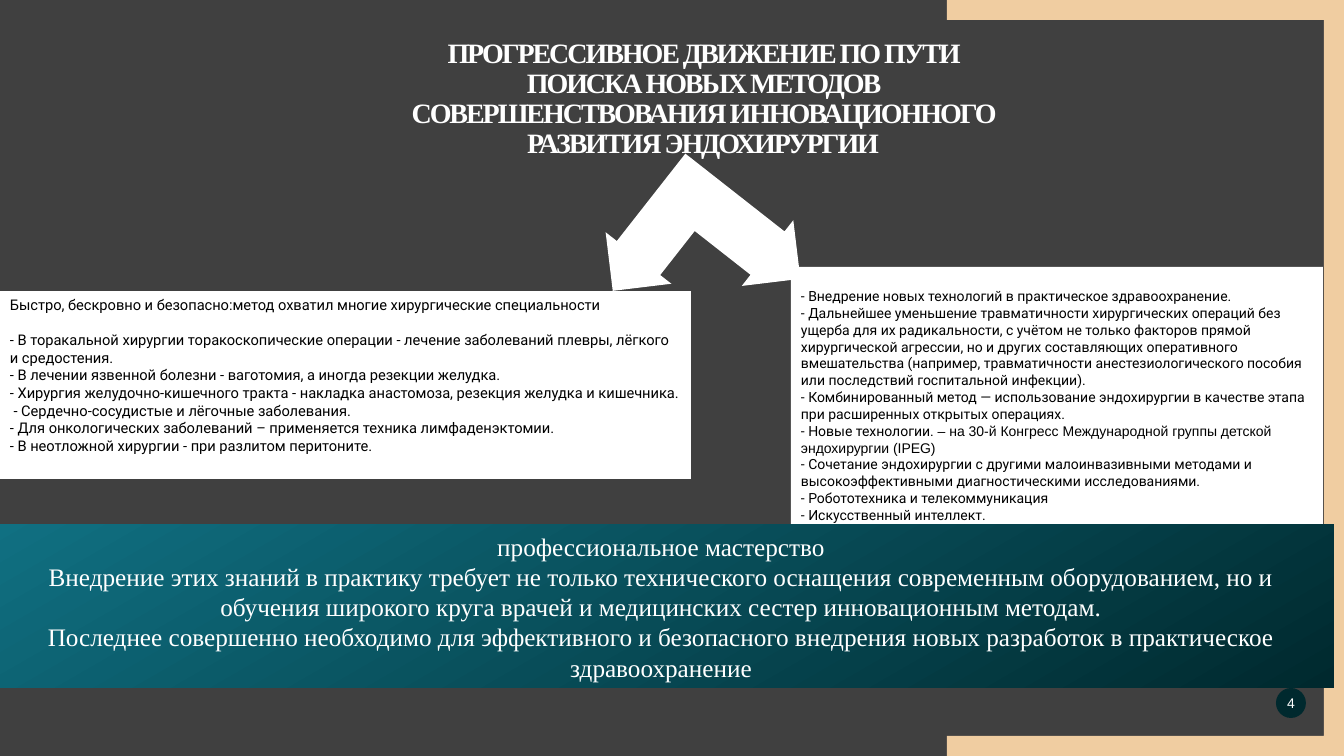
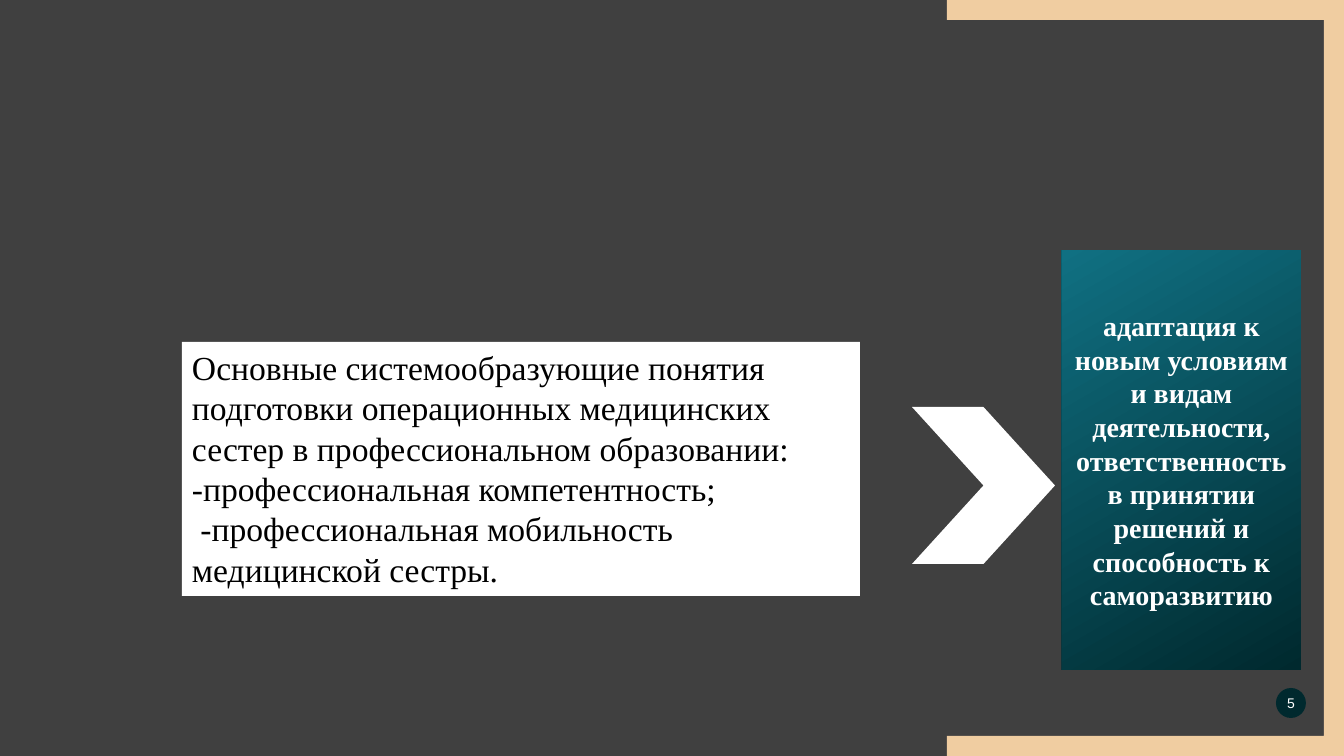
import pptx
import pptx.dml.color
import pptx.enum.shapes
import pptx.enum.text
import pptx.util

SHAPE = pptx.enum.shapes.MSO_SHAPE
ANCHOR = pptx.enum.text.MSO_ANCHOR
ALIGN = pptx.enum.text.PP_ALIGN

PAGE_WIDTH, PAGE_HEIGHT = 1344, 756
EMU_PER_PX = 12192000 / PAGE_WIDTH
SERIF, SANS, PLAIN = "Times New Roman", "Roboto", "Arial"
COLORS = {
    "ground": "404040",
    "frame": "F0CDA1",
    "deep": "00292E",
    "teal": "107082",
    "white": "FFFFFF",
    "black": "000000",
}
TITLE_ONLY, BLANK = 5, 6

TITLE = (
    "ПРОГРЕССИВНОЕ ДВИЖЕНИЕ ПО ПУТИ ПОИСКА НОВЫХ МЕТОДОВ "
    "СОВЕРШЕНСТВОВАНИЯ ИННОВАЦИОННОГО РАЗВИТИЯ ЭНДОХИРУРГИИ"
)
SPECIALTIES = [
    "Быстро, бескровно и безопасно:метод охватил многие хирургические специальности",
    "- В торакальной хирургии торакоскопические операции - лечение заболеваний плевры, "
    "лёгкого и средостения.",
    "- В лечении язвенной болезни - ваготомия, а иногда резекции желудка.",
    "- Хирургия желудочно-кишечного тракта - накладка анастомоза, резекция желудка и кишечника.",
    " - Сердечно-сосудистые и лёгочные заболевания.",
    "- Для онкологических заболеваний – применяется техника лимфаденэктомии.",
    "- В неотложной хирургии - при разлитом перитоните.",
]
DIRECTIONS = [
    "- Внедрение новых технологий в практическое здравоохранение.",
    "- Дальнейшее уменьшение травматичности хирургических операций без ущерба для их "
    "радикальности, с учётом не только факторов прямой хирургической агрессии, но и других "
    "составляющих оперативного вмешательства (например, травматичности анестезиологического "
    "пособия или последствий госпитальной инфекции).",
    "- Комбинированный метод — использование эндохирургии в качестве этапа при расширенных "
    "открытых операциях.",
    [
        ("- Новые технологии.", SANS),
        (" – на 30-й Конгресс Международной группы детской эндохирургии (IPEG)", PLAIN),
    ],
    "- Сочетание эндохирургии с другими малоинвазивными методами и высокоэффективными "
    "диагностическими исследованиями.",
    "- Робототехника и телекоммуникация",
    "- Искусственный интеллект.",
]
MASTERY = [
    "профессиональное мастерство",
    "Внедрение этих знаний в практику требует не только технического оснащения современным "
    "оборудованием, но и обучения широкого круга врачей и медицинских сестер инновационным "
    "методам.",
    "Последнее совершенно необходимо для эффективного и безопасного внедрения новых разработок "
    "в практическое здравоохранение",
]
CONCEPTS = [
    "Основные системообразующие понятия подготовки операционных медицинских сестер "
    "в профессиональном образовании:",
    "-профессиональная компетентность;",
    " -профессиональная мобильность медицинской сестры.",
]
ADAPTATION = [
    "адаптация к новым условиям и видам деятельности, ответственность в принятии решений "
    "и способность к саморазвитию"
]


def px(length):
    """Turn pixels into EMU."""
    return pptx.util.Emu(round(length * EMU_PER_PX))


def color(name):
    """Return a named colour."""
    return pptx.dml.color.RGBColor.from_string(COLORS[name])


class Slides:
    """Hold the shared style and the current slide."""

    def __init__(self):
        """Start a wide deck with a dark background."""
        self.deck = pptx.Presentation()
        self.deck.slide_width = px(PAGE_WIDTH)
        self.deck.slide_height = px(PAGE_HEIGHT)
        ground = self.deck.slide_master.background.fill
        ground.solid()
        ground.fore_color.rgb = color("ground")
        self.page = None

    def add_page(self, number, layout):
        """Add a slide with its frame and number badge."""
        self.page = self.deck.slides.add_slide(self.deck.slide_layouts[layout])
        left, edge = 947, 20
        right, bottom = PAGE_WIDTH, PAGE_HEIGHT
        outline = self.page.shapes.build_freeform(left, 0, scale=EMU_PER_PX)
        outline.add_line_segments(
            [
                (right, 0), (right, bottom), (left, bottom), (left, bottom - edge),
                (right - edge, bottom - edge), (right - edge, edge), (left, edge),
            ],
            close=True,
        )
        self.paint(outline.convert_to_shape(), "frame")
        badge = self.shape(SHAPE.OVAL, (1276, 688, 30, 30), "deep")
        self.set_text(badge, [str(number)], PLAIN, 10, align=ALIGN.CENTER, insets=(0, 0, 0, 0))

    def paint(self, shape, fill):
        """Give a shape a flat fill without line or shadow."""
        shape.shadow.inherit = False
        shape.line.fill.background()
        shape.fill.solid()
        shape.fill.fore_color.rgb = color(fill)

    def shape(self, kind, place, fill="white"):
        """Add a preset shape."""
        shape = self.page.shapes.add_shape(kind, *map(px, place))
        self.paint(shape, fill)
        return shape

    def set_text(self, shape, paragraphs, font, size, ink="white", align=ALIGN.LEFT,
                 anchor=ANCHOR.MIDDLE, bold=False, insets=(10, 5, 10, 5)):
        """Fill a shape with paragraphs of one style."""
        frame = shape.text_frame
        frame.word_wrap = True
        frame.auto_size = pptx.enum.text.MSO_AUTO_SIZE.NONE
        frame.vertical_anchor = anchor
        frame.margin_left, frame.margin_top, frame.margin_right, frame.margin_bottom = map(px, insets)
        for index, content in enumerate(paragraphs):
            para = frame.add_paragraph() if index else frame.paragraphs[0]
            para.alignment = align
            for text, face in [(content, font)] if isinstance(content, str) else content:
                span = para.add_run()
                span.text = text
                span.font.name = face
                span.font.size = pptx.util.Pt(size)
                span.font.bold = bold
                span.font.color.rgb = color(ink)
        return frame

    def title(self, text, place):
        """Place and format the title."""
        title = self.page.shapes.title
        title.left, title.top, title.width, title.height = map(px, place)
        frame = self.set_text(title, [text], SERIF, 20, align=ALIGN.CENTER, anchor=ANCHOR.TOP,
                              bold=True, insets=(0, 0, 0, 0))
        para = frame.paragraphs[0]
        para.line_spacing = 0.9
        para.runs[0].font._element.set("spc", "-150")

    def card(self, place, paragraphs, font, size, **style):
        """Add a white box with black text."""
        box = self.shape(SHAPE.RECTANGLE, place)
        return self.set_text(box, paragraphs, font, size, ink="black", **style)

    def panel(self, place, paragraphs, size, bold=False):
        """Add a teal gradient box with centred text."""
        box = self.shape(SHAPE.RECTANGLE, place)
        box.fill.gradient()
        box.fill.gradient_angle = 120
        for position, (stop, name) in enumerate(zip(box.fill.gradient_stops, ("deep", "teal"))):
            stop.position = position
            stop.color.rgb = color(name)
        self.set_text(box, paragraphs, SERIF, size, align=ALIGN.CENTER, bold=bold)

    def split_arrow(self, place):
        """Add a two-headed arrow pointing down to both sides."""
        arrow = self.shape(SHAPE.LEFT_UP_ARROW, place)
        arrow.rotation = 218.1
        for index, value in enumerate((0.33, 0.25, 0.25)):
            arrow.adjustments[index] = value


def main():
    """Build and save the deck."""
    slides = Slides()

    slides.add_page(4, TITLE_ONLY)
    slides.title(TITLE, (402, 39, 602, 116))
    specialties = slides.card((0, 291, 691, 188), SPECIALTIES, SANS, 10.5, anchor=ANCHOR.TOP)
    specialties.paragraphs[0].space_after = pptx.util.Pt(12.3)
    slides.card((791, 267, 532, 260), DIRECTIONS, SANS, 10, insets=(10, 22, 10, 5))
    slides.split_arrow((612, 172, 182, 167))
    slides.panel((-12, 525, 1346, 163), MASTERY, 18)

    slides.add_page(5, BLANK)
    slides.card((182, 342, 678, 254), CONCEPTS, SERIF, 24, anchor=ANCHOR.TOP)
    slides.shape(SHAPE.CHEVRON, (912, 407, 143, 157))
    slides.panel((1062, 250, 239, 420), ADAPTATION, 20, bold=True)

    slides.deck.save("out.pptx")


if __name__ == "__main__":
    main()
